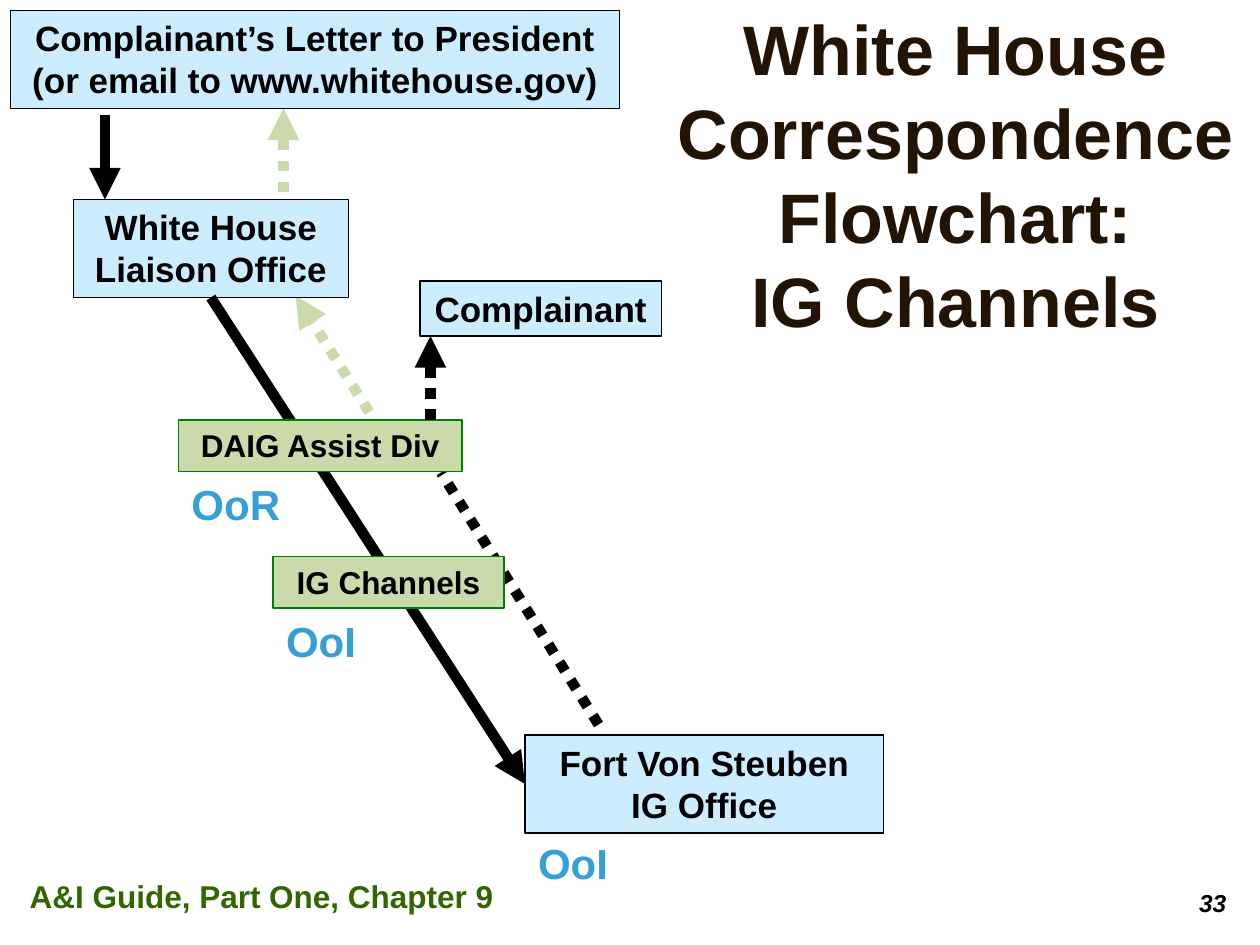
from dataclasses import dataclass
from typing import Optional

from lxml.etree import SubElement
from pptx import Presentation
from pptx.dml.color import RGBColor
from pptx.enum.dml import MSO_LINE_DASH_STYLE as Dash
from pptx.enum.shapes import MSO_CONNECTOR as Connector, MSO_SHAPE as Shape
from pptx.enum.text import MSO_ANCHOR as Anchor, MSO_AUTO_SIZE as AutoSize, PP_ALIGN as Align
from pptx.oxml.ns import qn
from pptx.util import Pt

COLORS = {
    "black": "000000",
    "sky": "CCECFF",
    "sage": "CADAAA",
    "green": "008000",
    "title": "221304",
    "guide": "336600",
    "role": "35A0D3",
}


@dataclass(frozen=True)
class Box:
    text: str
    left: float
    top: float
    width: float
    height: float
    fill: str = "sky"
    line: str = "black"
    size: float = 20


@dataclass(frozen=True)
class Label:
    text: str
    left: float
    top: float
    width: float
    height: float
    size: float = 24
    color: str = "role"
    italic: bool = False


@dataclass(frozen=True)
class Arrow:
    start: tuple[float, float]
    end: tuple[float, float]
    color: str = "black"
    dotted: bool = True
    head: bool = True


REPLY_ARROWS = [
    Arrow((342, 414), (252, 270), head=False),
    Arrow((211, 235.5), (169, 169), "sage"),
    Arrow((162, 110), (162, 62), "sage"),
]
LETTER = Box("Complainant’s Letter to President (or email to www.whitehouse.gov)", 6, 6, 348, 56)
FORT_OFFICE = Box("Fort Von Steuben\nIG Office", 300, 420, 205, 56)
LIAISON_OFFICE = Box("White House Liaison Office", 42, 114, 157, 56)
COMPLAINANT = Box("Complainant", 240, 160.5, 138, 31.5)
CHANNEL_BOXES = [
    Box("DAIG Assist Div", 102, 240, 162, 29.5, "sage", "green", 18),
    Box("IG Channels", 156, 318, 132, 29.5, "sage", "green", 18),
]
LABELS = [
    Label("A&I Guide, Part One, Chapter 9", 6.5, 497.5, 286, 29, 18, "guide"),
    Label("33", 678, 504, 30, 24, 14, "black", True),
    Label("OoR", 102, 270, 65.5, 36),
    Label("OoI", 156, 348, 55, 36),
    Label("OoI", 300, 475, 55, 36),
]


def rgb(name: str) -> RGBColor:
    """Return the named colour."""
    return RGBColor.from_string(COLORS[name])


def write_text(shape, text: str, *, size: float, color: str = "black", italic: bool = False,
               wrap: bool = True, anchor=Anchor.TOP, auto_size=AutoSize.SHAPE_TO_FIT_TEXT) -> None:
    """Fill a shape with centred bold text."""
    frame = shape.text_frame
    frame.text = text
    frame.word_wrap = wrap
    frame.auto_size = auto_size
    frame.vertical_anchor = anchor
    for paragraph in frame.paragraphs:
        paragraph.alignment = Align.CENTER
        for run in paragraph.runs:
            run.font.name = "Arial"
            run.font.size = Pt(size)
            run.font.bold = True
            run.font.italic = italic
            run.font.color.rgb = rgb(color)


def add_box(slide, box: Box):
    """Draw a bordered box and return it."""
    shape = slide.shapes.add_shape(Shape.RECTANGLE, Pt(box.left), Pt(box.top), Pt(box.width), Pt(box.height))
    shape.shadow.inherit = False
    shape.fill.solid()
    shape.fill.fore_color.rgb = rgb(box.fill)
    shape.line.color.rgb = rgb(box.line)
    shape.line.width = Pt(0.75)
    write_text(shape, box.text, size=box.size)
    return shape


def add_label(slide, label: Label) -> None:
    """Draw a line of free text."""
    shape = slide.shapes.add_textbox(Pt(label.left), Pt(label.top), Pt(label.width), Pt(label.height))
    write_text(shape, label.text, size=label.size, color=label.color, italic=label.italic, wrap=False)


def add_arrow(slide, arrow: Arrow, source: Optional[object] = None, target: Optional[object] = None) -> None:
    """Draw an arrow, joined from source's bottom to target's left when given."""
    points = [Pt(value) for value in (*arrow.start, *arrow.end)]
    connector = slide.shapes.add_connector(Connector.STRAIGHT, *points)
    connector.line.color.rgb = rgb(arrow.color)
    connector.line.width = Pt(6)
    if arrow.dotted:
        connector.line.dash_style = Dash.ROUND_DOT
    if arrow.head:
        SubElement(connector.line._get_or_add_ln(), qn("a:tailEnd"), type="triangle")
    SubElement(connector._element.spPr, qn("a:effectLst"))
    if source is not None:
        connector.begin_connect(source, 2)
    if target is not None:
        connector.end_connect(target, 1)


def add_title(slide) -> None:
    """Draw the slide title."""
    shape = slide.shapes.add_shape(Shape.FLOWCHART_PROCESS, Pt(372), Pt(18), Pt(348), Pt(162))
    shape.shadow.inherit = False
    shape.fill.background()
    shape.line.fill.background()
    write_text(shape, "White House Correspondence Flowchart:\vIG Channels", size=40, color="title",
               anchor=Anchor.MIDDLE, auto_size=AutoSize.NONE)


def main() -> None:
    """Build the flowchart slide."""
    presentation = Presentation()
    presentation.slide_width, presentation.slide_height = Pt(720), Pt(540)
    slide = presentation.slides.add_slide(presentation.slide_layouts[6])
    for arrow in REPLY_ARROWS:
        add_arrow(slide, arrow)
    add_title(slide)
    add_box(slide, LETTER)
    fort_office = add_box(slide, FORT_OFFICE)
    liaison_office = add_box(slide, LIAISON_OFFICE)
    add_arrow(slide, Arrow((60, 66), (60, 114), dotted=False))
    add_arrow(slide, Arrow((120.5, 170), (300, 448), dotted=False), liaison_office, fort_office)
    for box in CHANNEL_BOXES:
        add_box(slide, box)
    for label in LABELS:
        add_label(slide, label)
    add_arrow(slide, Arrow((246, 240), (246, 192)))
    add_box(slide, COMPLAINANT)
    presentation.save("out.pptx")


if __name__ == "__main__":
    main()
